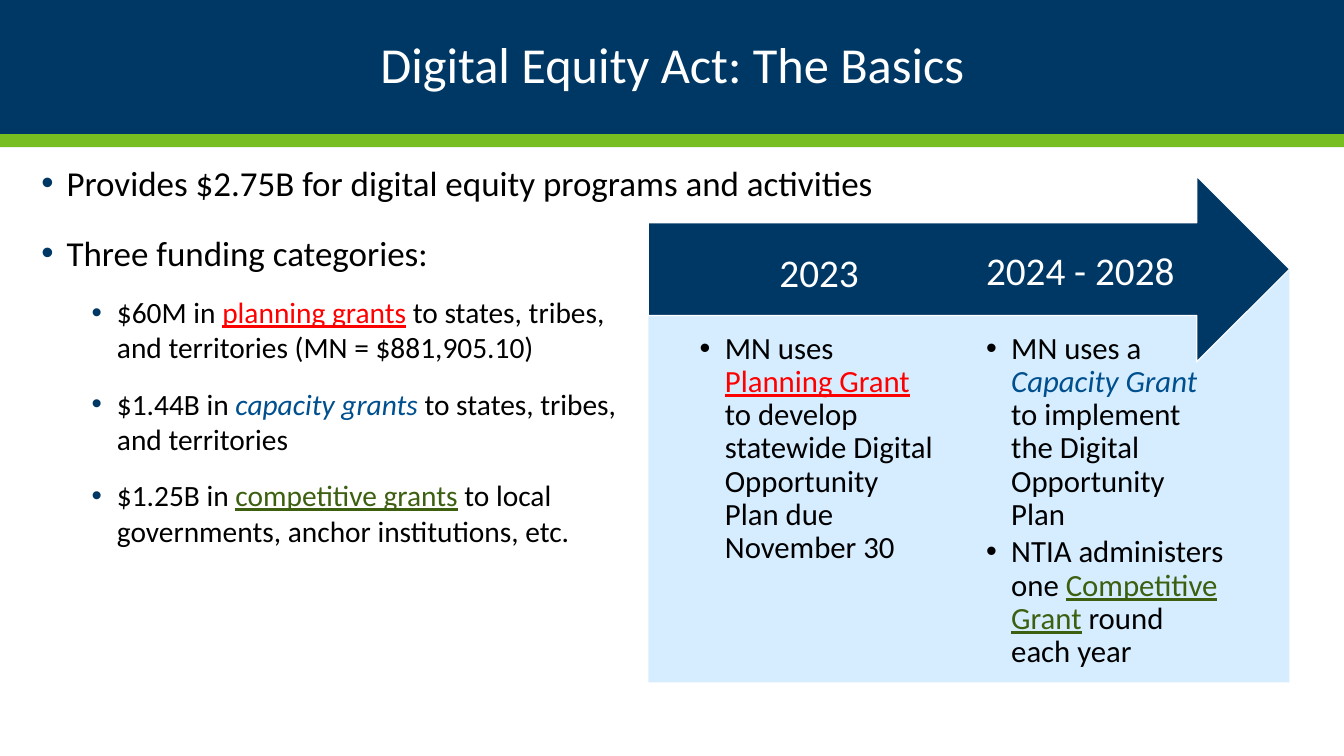
"""Build the Digital Equity Act overview slide."""
from dataclasses import dataclass

from lxml import etree
from pptx import Presentation, util as u
from pptx.dml.color import RGBColor
from pptx.enum import shapes, text
from pptx.oxml import ns

PX = 9144


@dataclass(frozen=True)
class Theme:
    font: str = "Calibri"
    navy: str = "003865"
    green: str = "78BE21"
    pale: str = "D6EDFF"
    white: str = "FFFFFF"
    black: str = "000000"
    planning: str = "FF0000"
    capacity: str = "004F8E"
    competitive: str = "3C5F10"
    title: int = 36
    heading: int = 28
    body: int = 25
    detail: int = 22
    sub: int = 21


class Deck:
    """Hold the theme and current slide and draw its elements."""

    def __init__(self, prs, theme):
        self.theme = theme
        self.s = prs.slides.add_slide(prs.slide_layouts[1])

    def place(self, sp, box):
        sp.left, sp.top, sp.width, sp.height = (n * PX for n in box)

    def shape(self, kind, box, fill, line=None):
        sp = self.s.shapes.add_shape(kind, *(n * PX for n in box))
        sp.shadow.inherit = False
        sp.fill.solid()
        sp.fill.fore_color.rgb = RGBColor.from_string(fill)
        if line:
            sp.line.color.rgb = RGBColor.from_string(line)
            sp.line.width = u.Pt(0.85)
        else:
            sp.line.fill.background()
        return sp

    def band(self, box, fill):
        sp = self.shape(shapes.MSO_SHAPE.RECTANGLE, box, fill)
        sp.element.getparent().insert(2, sp.element)

    def frame(self, sp, insets, anchor):
        tf = sp.text_frame
        tf.word_wrap = True
        tf.auto_size = text.MSO_AUTO_SIZE.NONE
        tf.vertical_anchor = anchor
        side, edge = insets
        tf.margin_left = tf.margin_right = side * PX
        tf.margin_top = tf.margin_bottom = edge * PX
        return tf

    def paragraph(self, tf, runs, size, color, first=True, before=0, after=0,
                  spacing=1.0, align=text.PP_ALIGN.LEFT):
        p = tf.paragraphs[0] if first else tf.add_paragraph()
        p.alignment = align
        p.line_spacing = spacing
        p.space_before = u.Pt(0 if first else before)
        p.space_after = u.Pt(after)
        for words, role in runs:
            for i, line in enumerate(words.split("\n")):
                if i:
                    p.add_line_break()
                r = p.add_run()
                r.text = line
                r.font.name = self.theme.font
                r.font.size = u.Pt(size)
                r.font.color.rgb = RGBColor.from_string(
                    getattr(self.theme, role) if role else color)
                r.font.italic = role == "capacity"
                r.font.underline = role in ("planning", "competitive")
        return p

    def bullet(self, p, color, margin=25, level=0):
        p.level = level
        pPr = p._p.get_or_add_pPr()
        pPr.set("marL", str(margin * PX))
        pPr.set("indent", str(-25 * PX))
        clr = etree.SubElement(pPr, ns.qn("a:buClr"))
        etree.SubElement(clr, ns.qn("a:srgbClr")).set("val", color)
        etree.SubElement(pPr, ns.qn("a:buFont")).set("typeface", "Arial")
        etree.SubElement(pPr, ns.qn("a:buChar")).set("char", "•")

    def title(self, words, box):
        sp = self.s.shapes.title
        self.place(sp, box)
        tf = self.frame(sp, (0, 5), text.MSO_ANCHOR.MIDDLE)
        self.paragraph(tf, [(words, None)], self.theme.title, self.theme.white,
                       spacing=0.9, align=text.PP_ALIGN.CENTER)

    def body(self, items, box):
        sp = self.s.placeholders[1]
        self.place(sp, box)
        tf = self.frame(sp, (10, 5), text.MSO_ANCHOR.TOP)
        for i, (level, runs) in enumerate(items):
            size = self.theme.sub if level else self.theme.body
            p = self.paragraph(tf, runs, size, self.theme.black, first=i == 0,
                               before=5 if level else 10, after=10)
            self.bullet(p, self.theme.navy, 75 if level else 25, level)

    def textbox(self, box, edge, anchor):
        sp = self.s.shapes.add_textbox(*(n * PX for n in box))
        return self.frame(sp, (0, edge), anchor)

    def heading(self, words, box, align):
        tf = self.textbox(box, 31, text.MSO_ANCHOR.MIDDLE)
        self.paragraph(tf, [(words, None)], self.theme.heading,
                       self.theme.white, spacing=0.9, align=align)

    def details(self, items, box):
        tf = self.textbox(box, 0, text.MSO_ANCHOR.TOP)
        for i, runs in enumerate(items):
            p = self.paragraph(tf, runs, self.theme.detail, self.theme.black,
                               first=i == 0, after=3, spacing=0.9)
            self.bullet(p, self.theme.black)


FUNDING = [
    (0, [("Provides $2.75B for digital equity programs and activities", None)]),
    (0, [("Three funding categories:", None)]),
    (1, [("$60M in ", None), ("planning grants", "planning"),
         (" to states, tribes, \nand territories (MN = $881,905.10)", None)]),
    (1, [("$1.44B in ", None), ("capacity grants", "capacity"),
         (" to states, tribes,\nand territories", None)]),
    (1, [("$1.25B in ", None), ("competitive grants", "competitive"),
         (" to local\ngovernments, anchor institutions, etc.", None)]),
]
PHASES = [
    ("2023", 694, 218, text.PP_ALIGN.CENTER, [
        [("MN uses ", None), ("Planning Grant ", "planning"),
         ("to develop statewide Digital Opportunity Plan due November 30", None)],
    ]),
    ("2024 - 2028", 978, 216, text.PP_ALIGN.LEFT, [
        [("MN uses a ", None), ("Capacity Grant ", "capacity"),
         ("to implement the Digital Opportunity Plan", None)],
        [("NTIA administers one ", None), ("Competitive Grant", "competitive"),
         (" round each year", None)],
    ]),
]


def main():
    prs = Presentation()
    prs.slide_width, prs.slide_height = u.Inches(13.33), u.Inches(7.5)
    theme = Theme()
    deck = Deck(prs, theme)
    deck.band((0, 0, 1333, 133), theme.navy)
    deck.band((0, 133, 1333, 13), theme.green)
    deck.title("Digital Equity Act: The Basics", (92, 0, 1150, 133))
    deck.body(FUNDING, (31, 155, 1302, 558))
    deck.shape(shapes.MSO_SHAPE.RECTANGLE, (643, 267, 636, 410), theme.pale)
    deck.shape(shapes.MSO_SHAPE.RIGHT_ARROW, (643, 175, 636, 184),
               theme.navy, theme.white)
    for years, left, top, align, items in PHASES:
        deck.details(items, (left, 330, 237, 347))
        deck.heading(years, (left, top, 237, 110), align)
    prs.save("out.pptx")


if __name__ == "__main__":
    main()
